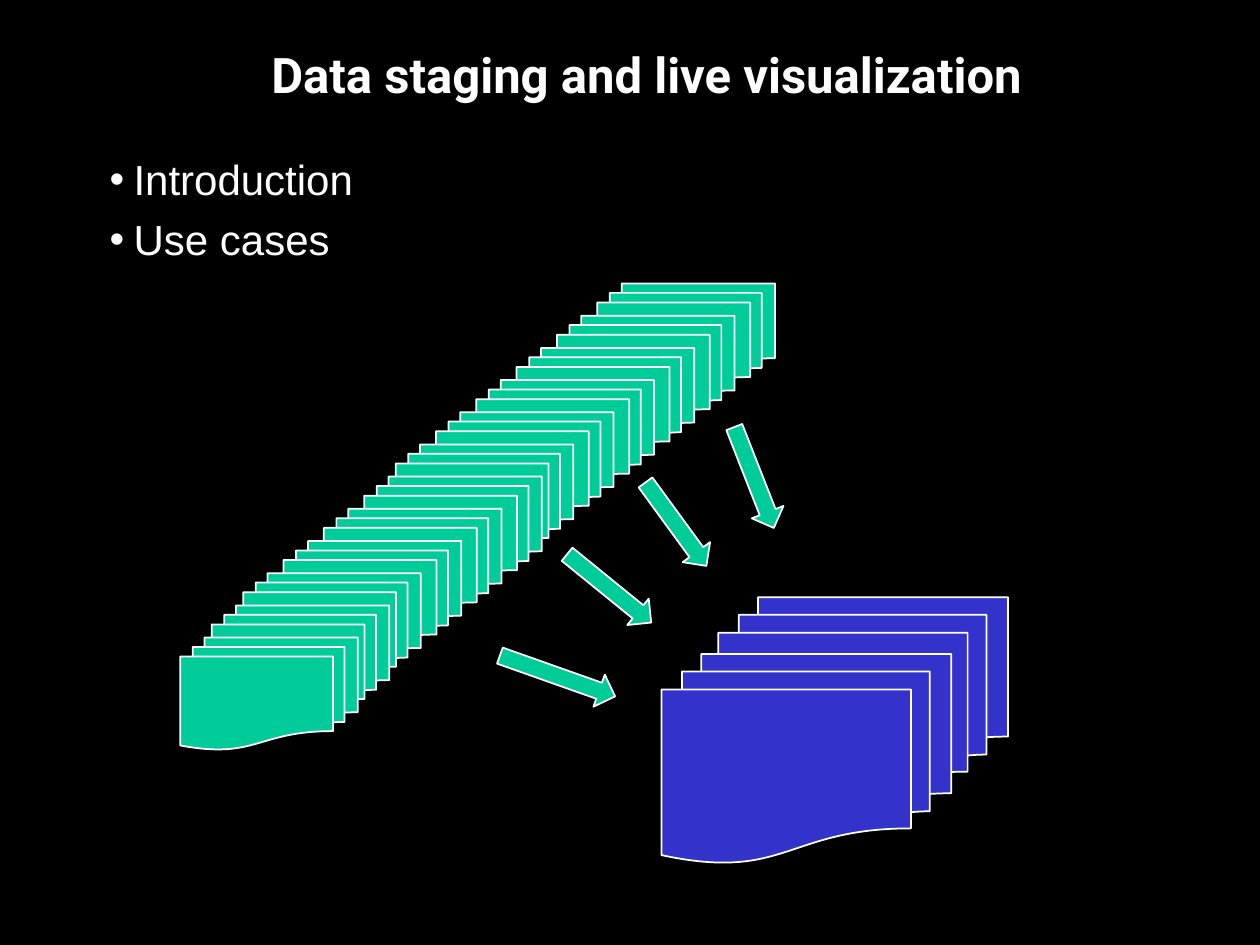
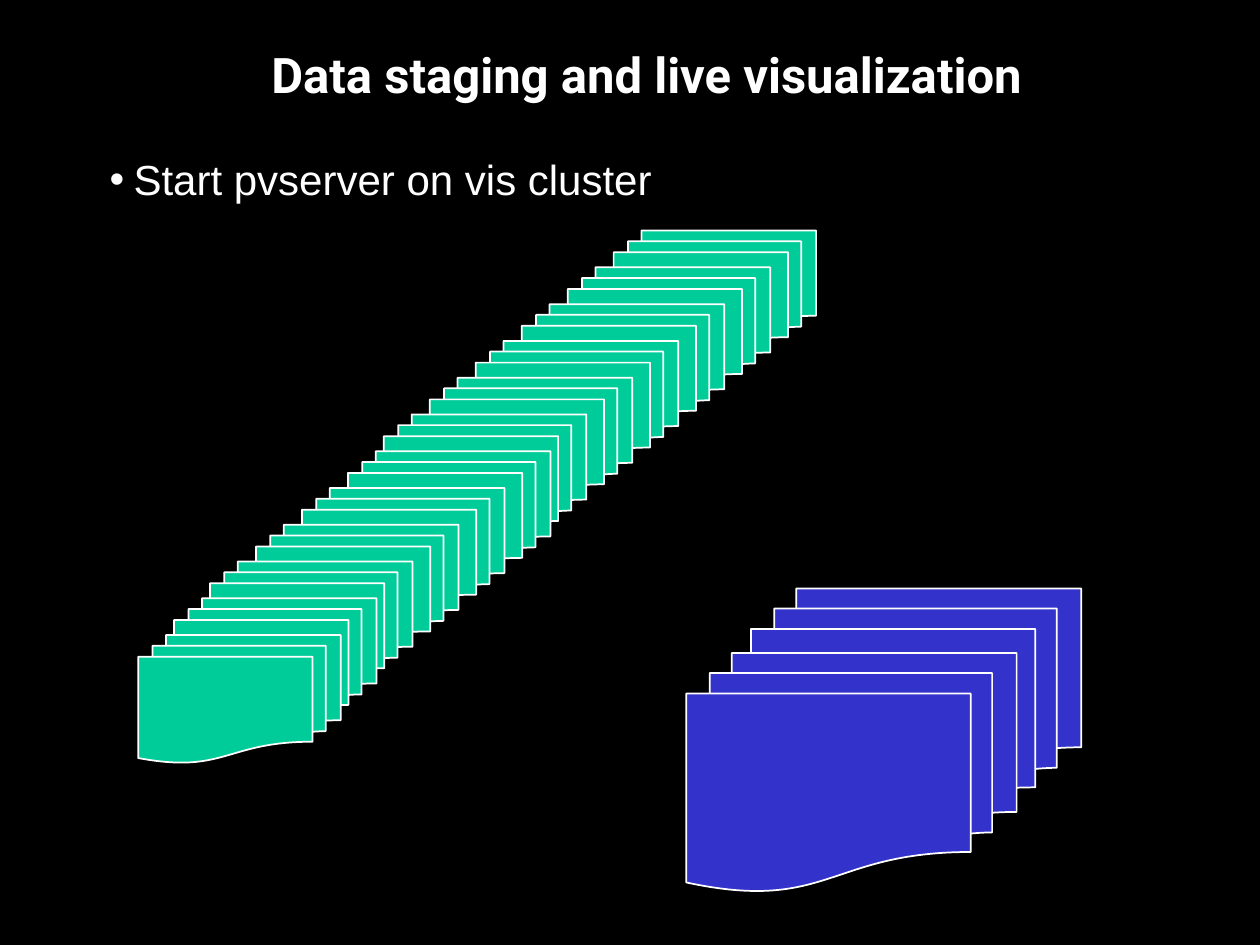
import lxml.etree
import pptx
import pptx.dml.color
import pptx.enum.shapes
import pptx.enum.text
import pptx.oxml.ns
import pptx.util

Inches = pptx.util.Inches
Pt = pptx.util.Pt
SHAPE = pptx.enum.shapes.MSO_SHAPE
ALIGN = pptx.enum.text.PP_ALIGN
ANCHOR = pptx.enum.text.MSO_ANCHOR

COLORS = {
    "background": "000000",
    "text": "FFFFFF",
    "outline": "FFFFFF",
    "simulation": "00CC99",
    "visualization": "3333CC",
}
TITLE = "Data staging and live visualization"
TITLE_BOX = (1.67, 0, 6.92, 1.17)
BODY_BOX = (0.58, 1.17, 8.83, 6)

SIMULATION_SIZE = (1.41, 0.89)
SIMULATION_COUNT = 12
LONG_STEP, SHORT_STEP = 0.32, 0.25
SHORT_STEPS_AT = (6, 10, 11)
VISUALIZATION_SIZE = (2.3, 1.66)
VISUALIZATION_STEP = 0.45
ENLARGED = 1.14

# left, top, height, rotation
STAGING_ARROWS = [
    (5.23, 3.75, 0.82, 323.9),
    (5.85, 3.36, 0.86, 338.6),
    (4.7, 4.24, 0.86, 309.1),
    (4.29, 4.88, 0.97, 289.5),
]
ARROW_WIDTH = 0.27


def rgb(role):
    return pptx.dml.color.RGBColor.from_string(COLORS[role])


def place(placeholder, box):
    placeholder.left, placeholder.top, placeholder.width, placeholder.height = map(Inches, box)


def add_bullet(paragraph):
    properties = paragraph._p.get_or_add_pPr()
    properties.set("marL", str(Inches(0.38)))
    properties.set("indent", str(Inches(-0.19)))
    bullet = lxml.etree.SubElement(properties, pptx.oxml.ns.qn("a:buChar"))
    bullet.set("char", "•")


def write(paragraph, text, font="Arial", size=24, bold=False, align=ALIGN.LEFT,
          space_before=0, bullet=False):
    if bullet:
        add_bullet(paragraph)
    paragraph.alignment = align
    paragraph.space_before = Pt(space_before)
    run = paragraph.add_run()
    run.text = text
    run.font.name = font
    run.font.size = Pt(size)
    run.font.bold = bold
    run.font.color.rgb = rgb("text")


def style_template(prs):
    background = prs.slide_master.background.fill
    background.solid()
    background.fore_color.rgb = rgb("background")
    layout = prs.slide_layouts[1]
    place(layout.placeholders[0], TITLE_BOX)
    place(layout.placeholders[1], BODY_BOX)
    return layout


def add_slide(prs, layout, points):
    slide = prs.slides.add_slide(layout)
    heading = slide.shapes.title.text_frame
    heading.vertical_anchor = ANCHOR.MIDDLE
    write(heading.paragraphs[0], TITLE, font="Roboto", size=28, bold=True, align=ALIGN.CENTER)
    body = slide.placeholders[1].text_frame
    for index, point in enumerate(points):
        paragraph = body.add_paragraph() if index else body.paragraphs[0]
        write(paragraph, point, bullet=True, space_before=5.5 if index else 0)
    return slide


def add_figure(group, preset, box, role, rotation=0):
    figure = group.shapes.add_shape(preset, *map(Inches, box))
    figure.shadow.inherit = False
    figure.rotation = rotation
    figure.fill.solid()
    figure.fill.fore_color.rgb = rgb(role)
    figure.line.color.rgb = rgb("outline")
    figure.line.width = Pt(1)


def add_simulation_stack(group, left, back_top, front_top, scale=1):
    """Stack the time steps from back to front, down and to the left."""
    width, height = (side * scale for side in SIMULATION_SIZE)
    drop = (front_top - back_top) / (SIMULATION_COUNT - 1)
    for index in range(SIMULATION_COUNT):
        if index:
            left -= scale * (SHORT_STEP if index in SHORT_STEPS_AT else LONG_STEP)
        box = (left, back_top + index * drop, width, height)
        add_figure(group, SHAPE.FLOWCHART_MULTIDOCUMENT, box, "simulation")


def add_visualization_stack(group, left, top, scale=1):
    width, height = (side * scale for side in VISUALIZATION_SIZE)
    for index in range(2):
        shift = index * VISUALIZATION_STEP * scale
        box = (left - shift, top + shift, width, height)
        add_figure(group, SHAPE.FLOWCHART_MULTIDOCUMENT, box, "visualization")


def add_staging_arrows(group):
    for left, top, height, rotation in STAGING_ARROWS:
        box = (left, top, ARROW_WIDTH, height)
        add_figure(group, SHAPE.DOWN_ARROW, box, "simulation", rotation)


def main():
    prs = pptx.Presentation()
    prs.slide_width, prs.slide_height = Inches(10), Inches(7.5)
    layout = style_template(prs)

    overview = add_slide(prs, layout, ["Introduction", "Use cases"])
    staging = overview.shapes.add_group_shape()
    add_simulation_stack(staging, 4.74, 2.25, 5.06)
    add_visualization_stack(staging, 5.7, 4.74)
    add_staging_arrows(staging)

    server_start = add_slide(prs, layout, ["Start pvserver on vis cluster"])
    cluster = server_start.shapes.add_group_shape()
    add_visualization_stack(cluster, 5.96, 4.67, ENLARGED)
    simulation = server_start.shapes.add_group_shape()
    add_simulation_stack(simulation, 4.87, 1.83, 5.04, ENLARGED)

    prs.save("out.pptx")


if __name__ == "__main__":
    main()
